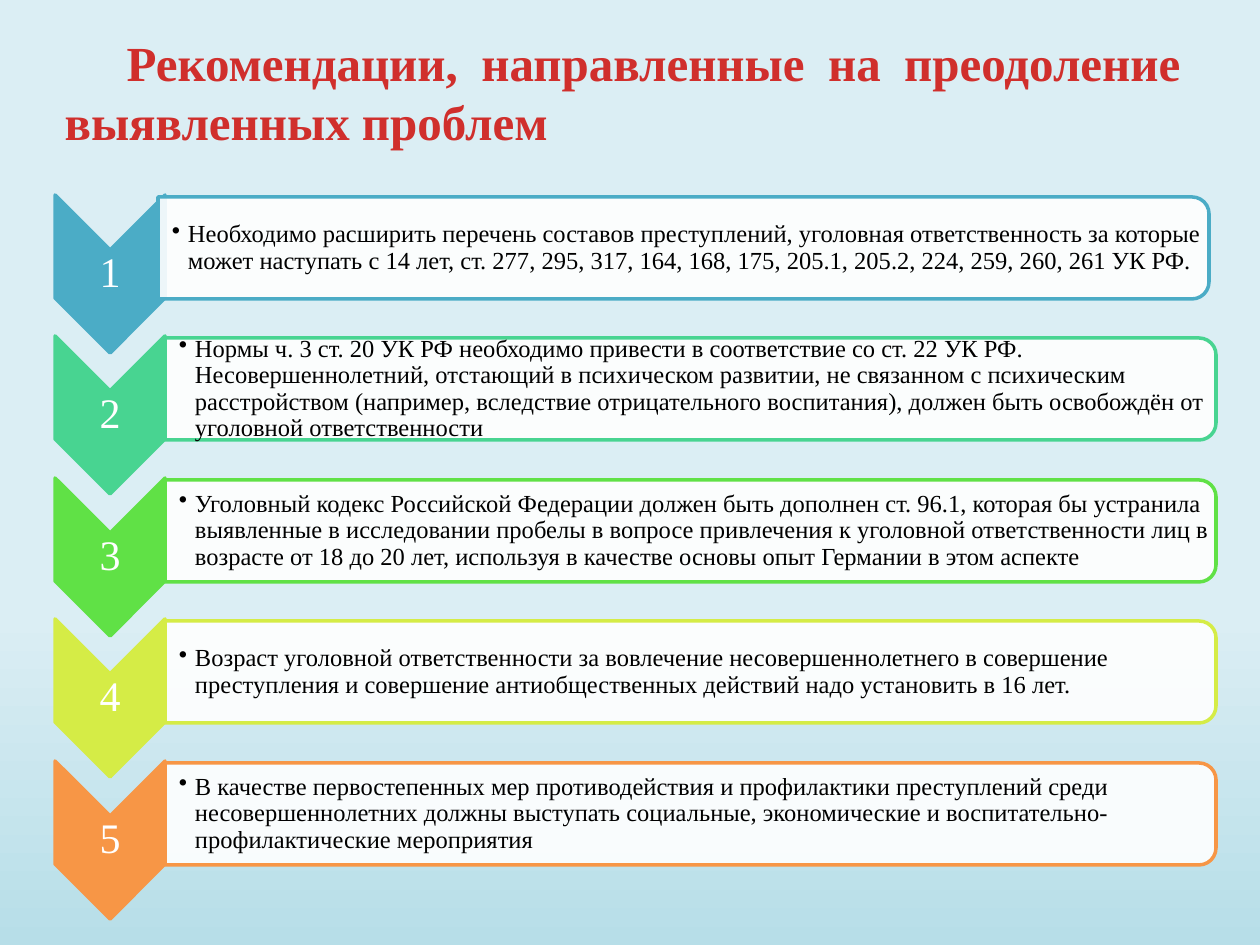
"""Builds a slide with five numbered recommendations beside downward chevrons."""
from dataclasses import dataclass

from lxml import etree
from pptx import Presentation
from pptx.dml.color import RGBColor
from pptx.enum.shapes import MSO_SHAPE
from pptx.enum.text import MSO_ANCHOR, MSO_AUTO_SIZE, PP_ALIGN
from pptx.oxml.ns import qn
from pptx.util import Pt

CHEVRON = MSO_SHAPE.CHEVRON
ROUND_TOP = MSO_SHAPE.ROUND_2_SAME_RECTANGLE
TOP, MIDDLE = MSO_ANCHOR.TOP, MSO_ANCHOR.MIDDLE
CENTER, JUSTIFY, LEFT = PP_ALIGN.CENTER, PP_ALIGN.JUSTIFY, PP_ALIGN.LEFT
FIT_SHAPE = MSO_AUTO_SIZE.SHAPE_TO_FIT_TEXT

EMU_PER_PX = 914400 / 126
TITLE_ONLY = 5

TITLE = "Рекомендации, направленные на преодоление выявленных проблем"
RECOMMENDATIONS = [
    ("4BACC6", "Необходимо расширить перечень составов преступлений, уголовная ответственность "
               "за которые может наступать с 14 лет, ст. 277, 295, 317, 164, 168, 175, 205.1, "
               "205.2, 224, 259, 260, 261 УК РФ."),
    ("48D491", "Нормы ч. 3 ст. 20 УК РФ необходимо привести в соответствие со ст. 22 УК РФ. "
               "Несовершеннолетний, отстающий в психическом развитии, не связанном с психическим "
               "расстройством (например, вследствие отрицательного воспитания), должен быть "
               "освобождён от уголовной ответственности"),
    ("60E146", "Уголовный кодекс Российской Федерации должен быть дополнен ст. 96.1, которая бы "
               "устранила выявленные в исследовании пробелы в вопросе привлечения к уголовной "
               "ответственности лиц в возрасте от 18 до 20 лет, используя в качестве основы опыт "
               "Германии в этом аспекте"),
    ("D5EC46", "Возраст уголовной ответственности за вовлечение несовершеннолетнего в совершение "
               "преступления и совершение антиобщественных действий надо установить в 16 лет."),
    ("F79646", "В качестве первостепенных мер противодействия и профилактики преступлений среди "
               "несовершеннолетних должны выступать социальные, экономические и "
               "воспитательно-профилактические мероприятия"),
]


@dataclass(frozen=True)
class Theme:
    """Colours, font, type sizes and line width of the slide."""
    font: str = "Times New Roman"
    title_color: str = "D02F2C"
    text_color: str = "000000"
    panel_color: str = "FFFFFF"
    background_top: str = "DBEEF4"
    background_bottom: str = "B7DEE8"
    title_size: int = 28
    number_size: int = 24
    body_size: int = 14
    line_width: int = 2
    line_spacing: float = 0.9


def px(length):
    """Turn pixels into EMU."""
    return round(length * EMU_PER_PX)


class SlideBuilder:
    """Holds the theme and the current slide and adds each kind of element."""

    def __init__(self, slide, theme):
        self.slide = slide
        self.theme = theme

    def background(self):
        """Fill the slide with a vertical gradient."""
        fill = self.slide.background.fill
        fill.gradient()
        fill.gradient_angle = 270
        colors = (self.theme.background_top, self.theme.background_bottom)
        for stop, position, color in zip(fill.gradient_stops, (0.65, 1), colors):
            stop.position = position
            stop.color.rgb = RGBColor.from_string(color)

    def run(self, paragraph, text, size, color, bold=False):
        """Add one formatted run."""
        run = paragraph.add_run()
        run.text = text
        run.font.name = self.theme.font
        run.font.size = Pt(size)
        run.font.bold = bold
        run.font.color.rgb = RGBColor.from_string(color)

    def indent(self, paragraph, margin, first_line):
        """Set the left margin and first-line indent, and return the properties."""
        properties = paragraph._p.get_or_add_pPr()
        properties.set("marL", str(px(margin)))
        properties.set("indent", str(px(first_line)))
        return properties

    def title(self, text, left, top, width, height):
        """Place and fill the title placeholder."""
        shape = self.slide.shapes.title
        shape.left, shape.top, shape.width, shape.height = map(px, (left, top, width, height))
        frame = shape.text_frame
        frame.vertical_anchor = TOP
        frame.auto_size = FIT_SHAPE
        paragraph = frame.paragraphs[0]
        paragraph.alignment = JUSTIFY
        self.indent(paragraph, 0, 62)
        self.run(paragraph, text, self.theme.title_size, self.theme.title_color, bold=True)

    def turned_shape(self, kind, left, top, width, height, fill, line, opacity=100):
        """Add a shape turned by 90 degrees that covers the given visible frame."""
        shift = (width - height) / 2
        frame = (left + shift, top - shift, height, width)
        shape = self.slide.shapes.add_shape(kind, *map(px, frame))
        shape.rotation = 90
        shape.shadow.inherit = False
        shape.fill.solid()
        shape.fill.fore_color.rgb = RGBColor.from_string(fill)
        shape.line.color.rgb = RGBColor.from_string(line)
        shape.line.width = Pt(self.theme.line_width)
        if opacity < 100:
            color = shape._element.spPr.find(qn("a:solidFill"))[0]
            etree.SubElement(color, qn("a:alpha"), val=str(opacity * 1000))

    def text_box(self, left, top, width, height, inset, left_inset, alignment):
        """Add a middle-anchored text box and return its paragraph."""
        shape = self.slide.shapes.add_textbox(*map(px, (left, top, width, height)))
        frame = shape.text_frame
        frame.word_wrap = True
        frame.vertical_anchor = MIDDLE
        frame.margin_left = px(left_inset)
        frame.margin_top = frame.margin_right = frame.margin_bottom = px(inset)
        paragraph = frame.paragraphs[0]
        paragraph.alignment = alignment
        paragraph.line_spacing = self.theme.line_spacing
        return paragraph

    def number(self, text, left, top, width, height):
        """Add the number of a recommendation."""
        paragraph = self.text_box(left, top, width, height, 2, 2, CENTER)
        self.run(paragraph, text, self.theme.number_size, self.theme.panel_color)

    def bullet(self, text, left, top, width, height):
        """Add a bulleted recommendation."""
        paragraph = self.text_box(left, top, width, height, 1, 14, LEFT)
        paragraph.level = 1
        properties = self.indent(paragraph, 16, -16)
        etree.SubElement(properties, qn("a:buChar"), char="•")
        self.run(paragraph, text, self.theme.body_size, self.theme.text_color)

    def recommendation(self, number, text, color, top, panel_left):
        """Add a chevron with its number and the panel with its text."""
        self.turned_shape(CHEVRON, 55, top, 110, 158, color, color)
        self.number(str(number), 55, top + 55, 110, 47)
        self.turned_shape(ROUND_TOP, panel_left, top + 2, 1051, 102,
                          self.theme.panel_color, color, opacity=90)
        self.bullet(text, panel_left, top + 7, 1046, 92)


def main():
    """Build and save the presentation."""
    presentation = Presentation()
    presentation.slide_width, presentation.slide_height = px(1260), px(945)
    slide = presentation.slides.add_slide(presentation.slide_layouts[TITLE_ONLY])
    builder = SlideBuilder(slide, Theme())
    builder.background()
    builder.title(TITLE, 52, 26, 1141, 131)
    for index, (color, text) in enumerate(RECOMMENDATIONS):
        panel_left = 165 if index else 158
        builder.recommendation(index + 1, text, color, 195 + index * 283 // 2, panel_left)
    presentation.save("out.pptx")


if __name__ == "__main__":
    main()
